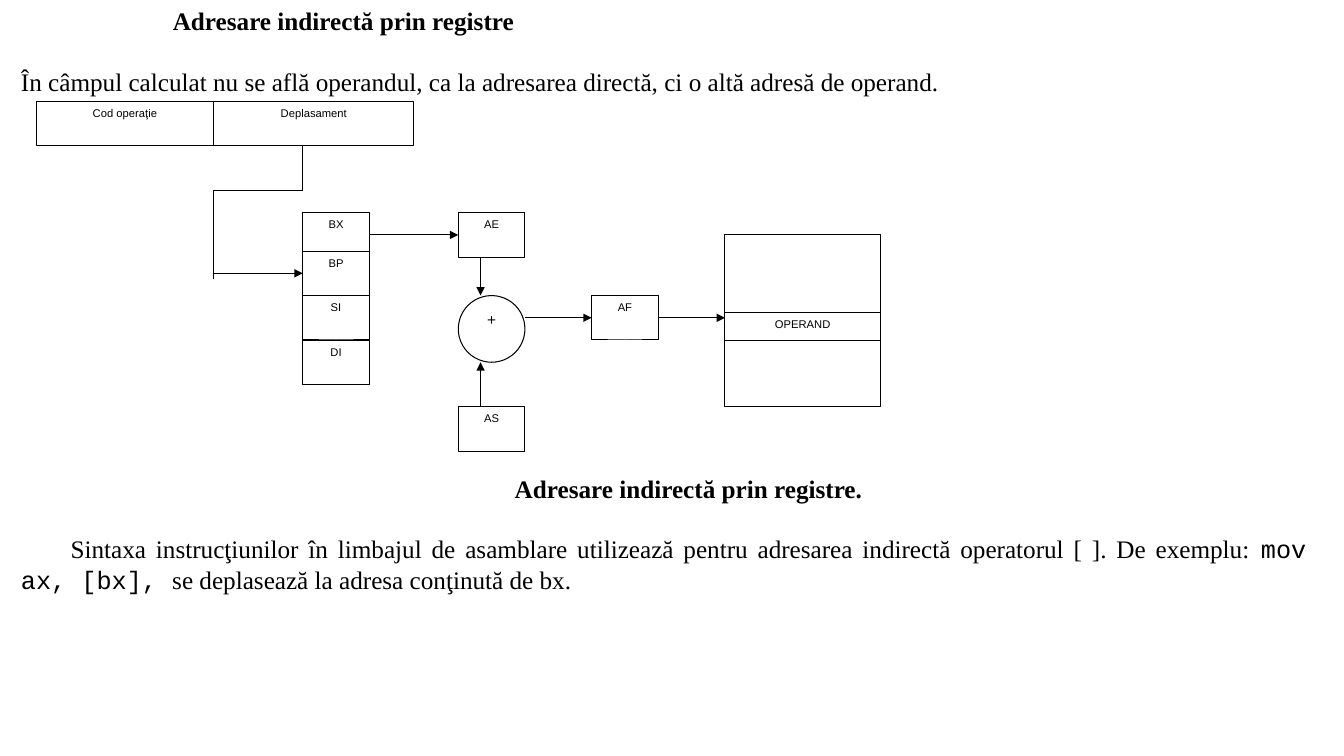
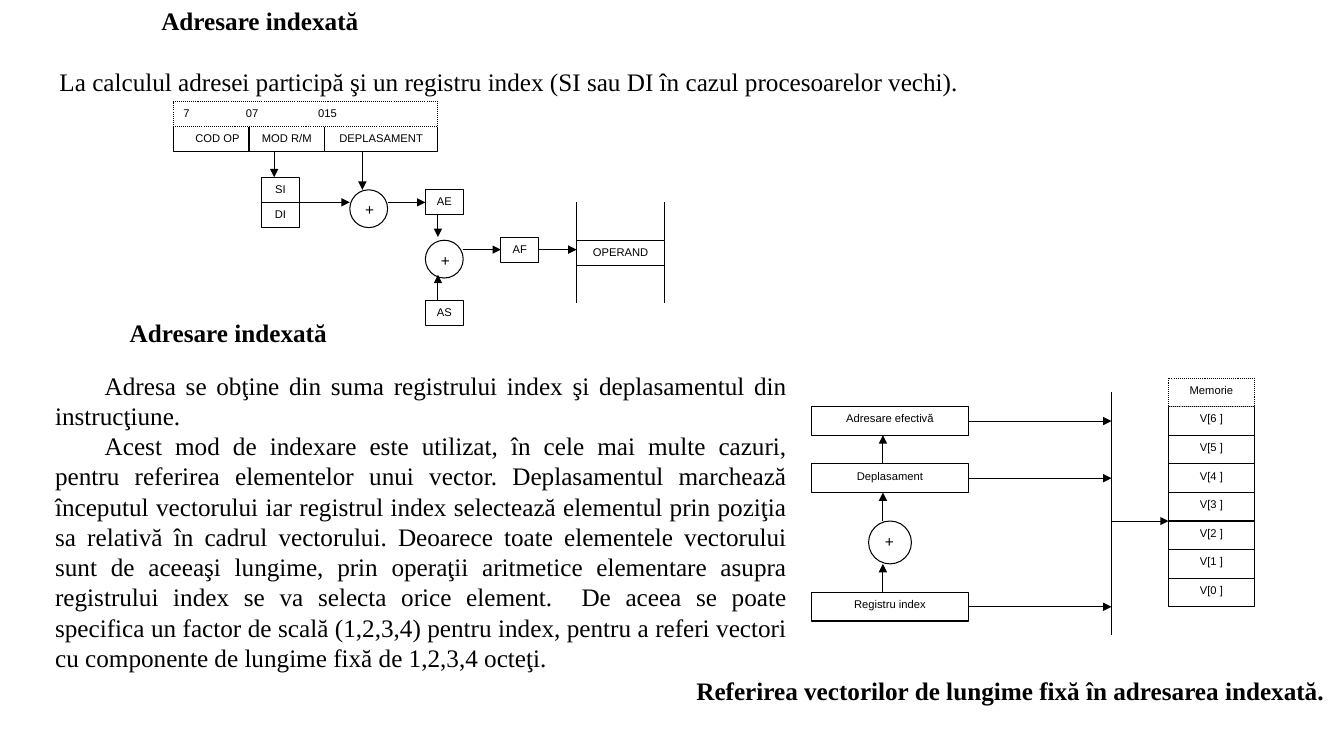
from lxml import etree
from pptx import Presentation
from pptx.dml.color import RGBColor
from pptx.enum.dml import MSO_LINE
from pptx.enum.shapes import MSO_CONNECTOR, MSO_SHAPE
from pptx.enum.text import MSO_ANCHOR, MSO_AUTO_SIZE, PP_ALIGN
from pptx.oxml.ns import qn
from pptx.util import Cm, Pt

LEFT, CENTER, JUSTIFY = PP_ALIGN.LEFT, PP_ALIGN.CENTER, PP_ALIGN.JUSTIFY
DOTTED = MSO_LINE.ROUND_DOT
RECTANGLE, OVAL = MSO_SHAPE.RECTANGLE, MSO_SHAPE.OVAL
STRAIGHT = MSO_CONNECTOR.STRAIGHT

INK, PAPER = "000000", "FFFFFF"
SERIF, SANS, MONO = "Times New Roman", "Arial", "Courier New"
BODY_SIZE, LABEL_SIZE, SIGN_SIZE = 18, 8, 11
FIRST_LINE = 1.25
LINE_GAP = 21.8

REGISTER_DIAGRAM = {
    "origin": (0.91, 2.56),
    "step": 0.56,
    "boxes": [
        ("Cod operaţie", 0, 0, 8, 2), ("Deplasament", 8, 0, 9, 2),
        ("BX", 12, 5, 3, 2),
        *[(register, 12, 6.73 + 2 * row, 3, 2) for row, register in enumerate(["BP", "SI", "DI"])],
        ("AE", 19, 5, 3, 2), ("AS", 19, 13.73, 3, 2), ("AF", 25, 8.73, 3, 2),
        ("OPERAND", 31, 9.48, 7, 1.75), ("", 31, 6, 7, 3.48), ("", 31, 10.73, 7, 3),
    ],
    "dotted": [],
    "sums": [(19, 8.73, 3, CENTER)],
    "lines": [(12, 2, 12, 4), (12, 4, 8, 4), (8, 4, 8, 8)],
    "arrows": [
        (8, 7.73, 12, 7.73), (15, 6, 19, 6), (20, 7, 20, 8.73),
        (20, 13.73, 20, 11.73), (22, 9.73, 25, 9.73), (28, 9.73, 31, 9.73),
    ],
}

INDEX_DIAGRAM = {
    "origin": (4.37, 2.56),
    "step": 1.27 / 4,
    "boxes": [
        ("AE", 20, 7, 3, 2), ("AS", 20, 15.75, 3, 2), ("AF", 26, 10.75, 3, 2),
        ("OPERAND", 32, 11, 7, 2), ("SI", 7, 6, 3, 2), ("DI", 7, 8, 3, 2),
        ("COD OP", 0, 2, 7, 2), ("MOD R/M", 6, 2, 6, 2), ("DEPLASAMENT", 12, 2, 9, 2),
    ],
    "dotted": [("7\t07\t015", 0, 0, 21, 2)],
    "sums": [(14, 7, 3, CENTER), (20, 11, 3, CENTER)],
    "lines": [(x, y, x, end) for x in (32, 39) for y, end in ((11, 8), (13, 16))],
    "arrows": [
        (21, 9, 21, 10.75), (21, 15.75, 21, 13.75), (23, 11.75, 26, 11.75),
        (29, 11.75, 32, 11.75), (10, 8, 14, 8), (17, 8, 20, 8),
        (8, 4, 8, 6), (15, 4, 15, 7),
    ],
}
BIT_TABS = (1.58, 3.4)

VECTOR_DIAGRAM = {
    "origin": (20.45, 9.53),
    "step": 0.36,
    "boxes": [
        ("Adresare efectivă", 0, 2, 11, 2), ("Deplasament", 0, 6, 11, 2),
        ("Registru index", 0, 15, 11, 2),
        *[(f"V[{6 - row} ]", 25, 2 + 2 * row, 6, 2) for row in range(7)],
    ],
    "dotted": [("Memorie", 25, 0, 6, 2)],
    "sums": [(4, 10, 3, LEFT)],
    "lines": [(21, 1, 21, 18)],
    "arrows": [
        *[(5, start, 5, end) for start, end in ((15, 13), (10, 8), (6, 4))],
        *[(11, y, 21, y) for y in (3, 7, 16)],
        (21, 10, 25, 10),
    ],
}

SLIDES = [
    {
        "title": ("Adresare indirectă prin registre", 4.1),
        "texts": [
            ((0.28, 1.54, 33.5, 1.02), [
                (JUSTIFY, 0, False, [("În câmpul calculat nu se află operandul, ca la adresarea directă, "
                                      "ci o altă adresă de operand.", SERIF)]),
            ]),
            ((0.28, 11.79, 32.89, 3.33), [
                (CENTER, FIRST_LINE, True, [("Adresare indirectă prin registre.", SERIF)]),
                (JUSTIFY, FIRST_LINE, False, [
                    ("Sintaxa instrucţiunilor în limbajul de asamblare utilizează pentru adresarea "
                     "indirectă operatorul [ ]. De exemplu: ", SERIF),
                    ("mov ax, [bx], ", MONO),
                    ("se deplasează la adresa conţinută de bx.", SERIF),
                ]),
            ]),
        ],
        "diagrams": [REGISTER_DIAGRAM],
    },
    {
        "title": ("Adresare indexată", 3.81),
        "texts": [
            ((0, 1.54, 32.41, 1.02), [
                (JUSTIFY, FIRST_LINE, False, [("La calculul adresei participă şi un registru index "
                                               "(SI sau DI în cazul procesoarelor vechi).", SERIF)]),
            ]),
            ((3.02, 7.87, 6, 1.02), [(LEFT, 0, True, [("Adresare indexată", SERIF)])]),
            ((1.14, 9.2, 18.95, 7.95), [
                (JUSTIFY, FIRST_LINE, False, [("Adresa se obţine din suma registrului index şi "
                                               "deplasamentul din instrucţiune.", SERIF)]),
                (JUSTIFY, FIRST_LINE, False, [(
                    "Acest mod de indexare este utilizat, în cele mai multe cazuri, pentru referirea "
                    "elementelor unui vector. Deplasamentul marchează începutul vectorului iar registrul "
                    "index selectează elementul prin poziţia sa relativă în cadrul vectorului. Deoarece "
                    "toate elementele vectorului sunt de aceeaşi lungime, prin operaţii aritmetice "
                    "elementare asupra registrului index se va selecta orice element.  De aceea se poate "
                    "specifica un factor de scală (1,2,3,4) pentru index, pentru a referi vectori cu "
                    "componente de lungime fixă de 1,2,3,4 octeţi.", SERIF)]),
            ]),
            ((17.3, 16.89, 16.5, 1.02), [
                (LEFT, 0, True, [("Referirea vectorilor de lungime fixă în adresarea indexată.", SERIF)]),
            ]),
        ],
        "diagrams": [INDEX_DIAGRAM, VECTOR_DIAGRAM],
    },
]


def color(value):
    return RGBColor.from_string(value)


def style_font(font, name, size, bold=False):
    font.name, font.size, font.bold = name, Pt(size), bold
    font.color.rgb = color(INK)


def add_title(slide, text, left):
    title = slide.shapes.title
    title.left, title.top, title.width, title.height = Cm(left), 0, Cm(25), Cm(1.02)
    frame = title.text_frame
    frame.text = text
    frame.auto_size = MSO_AUTO_SIZE.NONE
    frame.vertical_anchor = MSO_ANCHOR.TOP
    frame.paragraphs[0].alignment = LEFT
    style_font(frame.paragraphs[0].runs[0].font, SERIF, BODY_SIZE, True)


def add_text(slide, place, paragraphs):
    frame = slide.shapes.add_textbox(*map(Cm, place)).text_frame
    frame.word_wrap = True
    after_caption = False
    for index, (alignment, indent, bold, pieces) in enumerate(paragraphs):
        paragraph = frame.add_paragraph() if index else frame.paragraphs[0]
        paragraph.alignment = alignment
        paragraph._p.get_or_add_pPr().set("indent", str(Cm(indent)))
        if after_caption:
            paragraph.space_before = Pt(LINE_GAP)
        after_caption = bold
        for text, font_name in pieces:
            run = paragraph.add_run()
            run.text = text
            style_font(run.font, font_name, BODY_SIZE, bold)


def add_node(slide, outline, place, label, size=LABEL_SIZE, alignment=CENTER, dash=None):
    node = slide.shapes.add_shape(outline, *place)
    node.shadow.inherit = False
    node.fill.solid()
    node.fill.fore_color.rgb = color(PAPER)
    node.line.color.rgb = color(INK)
    node.line.width = Pt(0.75)
    if dash:
        node.line.dash_style = dash
    if not label:
        return
    frame = node.text_frame
    frame.text = label
    frame.vertical_anchor = MSO_ANCHOR.TOP
    paragraph = frame.paragraphs[0]
    paragraph.alignment = alignment
    if "\t" in label:
        paragraph.alignment = LEFT
        tabs = etree.SubElement(paragraph._p.get_or_add_pPr(), qn("a:tabLst"))
        for stop in BIT_TABS:
            etree.SubElement(tabs, qn("a:tab"), pos=str(Cm(stop)), algn="l")
    for run in paragraph.runs:
        style_font(run.font, SANS, size)


def add_line(slide, ends, arrow):
    connector = slide.shapes.add_connector(STRAIGHT, *ends)
    connector.line.color.rgb = color(INK)
    connector.line.width = Pt(0.75)
    if arrow:
        etree.SubElement(connector.line._get_or_add_ln(), qn("a:tailEnd"), type="triangle")
    etree.SubElement(connector._element.spPr, qn("a:effectLst"))


def add_diagram(slide, diagram):
    (left, top), step = diagram["origin"], diagram["step"]

    def point(x, y):
        return Cm(left + x * step), Cm(top + y * step)

    def area(x, y, width, height):
        return *point(x, y), Cm(width * step), Cm(height * step)

    for kind, dash in (("boxes", None), ("dotted", DOTTED)):
        for label, *cell in diagram[kind]:
            add_node(slide, RECTANGLE, area(*cell), label, dash=dash)
    for x, y, diameter, alignment in diagram["sums"]:
        add_node(slide, OVAL, area(x, y, diameter, diameter), "+", SIGN_SIZE, alignment)
    for kind in ("lines", "arrows"):
        for x1, y1, x2, y2 in diagram[kind]:
            add_line(slide, (*point(x1, y1), *point(x2, y2)), kind == "arrows")


def main():
    deck = Presentation()
    deck.slide_width, deck.slide_height = Cm(33.87), Cm(19.05)
    for content in SLIDES:
        slide = deck.slides.add_slide(deck.slide_layouts[5])
        add_title(slide, *content["title"])
        for place, paragraphs in content["texts"]:
            add_text(slide, place, paragraphs)
        for diagram in content["diagrams"]:
            add_diagram(slide, diagram)
    deck.save("out.pptx")


if __name__ == "__main__":
    main()
